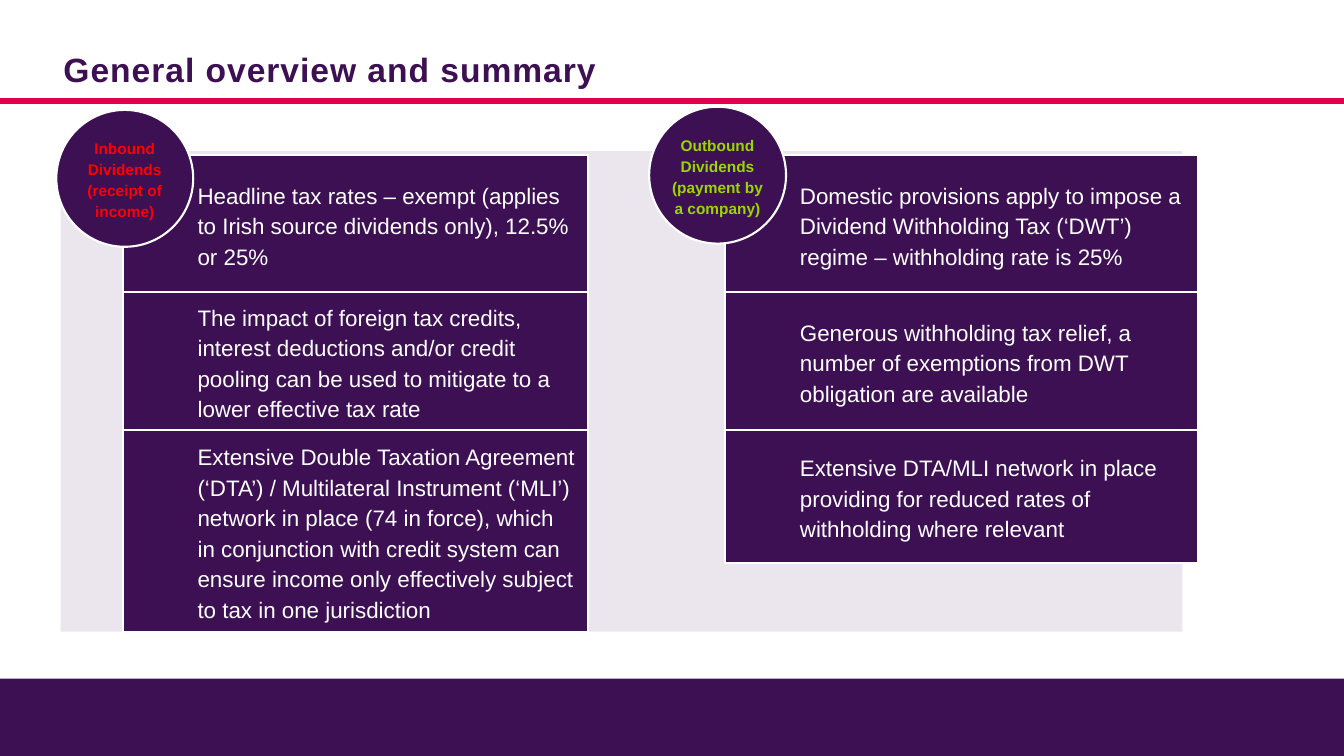
from pptx import Presentation
from pptx.dml.color import RGBColor
from pptx.enum.shapes import MSO_CONNECTOR, MSO_SHAPE
from pptx.enum.text import MSO_ANCHOR, PP_ALIGN
from pptx.oxml.ns import qn
from pptx.util import Cm, Pt
from lxml import etree

PURPLE = RGBColor(0x3C, 0x10, 0x53)
PINK = RGBColor(0xE0, 0x00, 0x4D)
WHITE = RGBColor(0xFF, 0xFF, 0xFF)
RED = RGBColor(0xFF, 0x00, 0x00)
GREEN = RGBColor(0x99, 0xD7, 0x00)

prs = Presentation()
prs.slide_width, prs.slide_height = Cm(33.87), Cm(19.05)
s = prs.slides.add_slide(prs.slide_layouts[6])


def add_box(kind, x, y, w, h, outlined=False):
    sp = s.shapes.add_shape(kind, Cm(x), Cm(y), Cm(w), Cm(h))
    sp.shadow.inherit = False
    sp.fill.solid()
    sp.fill.fore_color.rgb = PURPLE
    if outlined:
        sp.line.color.rgb = WHITE
        sp.line.width = Pt(1.5)
    else:
        sp.line.fill.background()
    return sp


def write(sp, text, size=16, color=WHITE, bold=False, align=PP_ALIGN.LEFT,
          anchor=MSO_ANCHOR.MIDDLE, spacing=1.14, insets=(0, 0, 0, 0)):
    tf = sp.text_frame
    tf.word_wrap = True
    tf.vertical_anchor = anchor
    tf.margin_left, tf.margin_top, tf.margin_right, tf.margin_bottom = map(Cm, insets)
    p = tf.paragraphs[0]
    p.alignment = align
    p.line_spacing = spacing
    r = p.add_run()
    r.text = text
    r.font.name = "Arial"
    r.font.size = Pt(size)
    r.font.bold = bold
    r.font.color.rgb = color
    return r


# Footer band, title rule and pale panel
add_box(MSO_SHAPE.RECTANGLE, 0, 17.1, 33.87, 1.95)
rule = s.shapes.add_connector(MSO_CONNECTOR.STRAIGHT, 0, Cm(2.54), prs.slide_width, Cm(2.54))
rule.line.color.rgb = PINK
rule.line.width = Pt(4)
etree.SubElement(rule._element.spPr, qn("a:effectLst"))
panel = add_box(MSO_SHAPE.RECTANGLE, 1.53, 3.81, 28.27, 12.11)
panel_color = panel._element.spPr.find(qn("a:solidFill"))[0]
etree.SubElement(panel_color, qn("a:alpha"), val="10000")

# Title
title = s.shapes.add_textbox(Cm(1.6), Cm(1.27), Cm(22.23), Cm(1.27))
r = write(title, "General overview and summary", size=24, color=PURPLE, bold=True,
          anchor=MSO_ANCHOR.TOP, spacing=0.83, insets=(0, 0.13, 0, 0.13))
r.font._element.set("spc", "70")

# Columns: card left and width, circle left and top, label, label colour, cards
CARDS_TOP, CIRCLE = 3.91, 3.45
columns = [
    (3.1, 11.71, 1.42, 2.77, "Inbound Dividends (receipt of income)", RED, [
        (3.46, "Headline tax rates – exempt (applies to Irish source dividends only), "
               "12.5% or 25%"),
        (3.46, "The impact of foreign tax credits, interest deductions and/or credit "
               "pooling can be used to mitigate to a lower effective tax rate"),
        (5.11, "Extensive Double Taxation Agreement (‘DTA’) / Multilateral Instrument "
               "(‘MLI’) network in place (74 in force), which in conjunction with credit "
               "system can ensure income only effectively subject to tax in one "
               "jurisdiction"),
    ]),
    (18.28, 11.91, 16.36, 2.69, "Outbound Dividends (payment by a company)", GREEN, [
        (3.46, "Domestic provisions apply to impose a Dividend Withholding Tax (‘DWT’) "
               "regime – withholding rate is 25%"),
        (3.46, "Generous withholding tax relief, a number of exemptions from DWT "
               "obligation are available"),
        (3.35, "Extensive DTA/MLI network in place providing for reduced rates of "
               "withholding where relevant"),
    ]),
]
for x, w, circle_x, circle_y, label, color, cards in columns:
    y = CARDS_TOP
    for h, text in cards:
        card = add_box(MSO_SHAPE.RECTANGLE, x, y, w, h, outlined=True)
        write(card, text, insets=(1.88, 0.3, 0.3, 0.3))
        y += h
    circle = add_box(MSO_SHAPE.OVAL, circle_x, circle_y, CIRCLE, CIRCLE, outlined=True)
    write(circle, label, size=11, color=color, bold=True, align=PP_ALIGN.CENTER)

prs.save("out.pptx")
